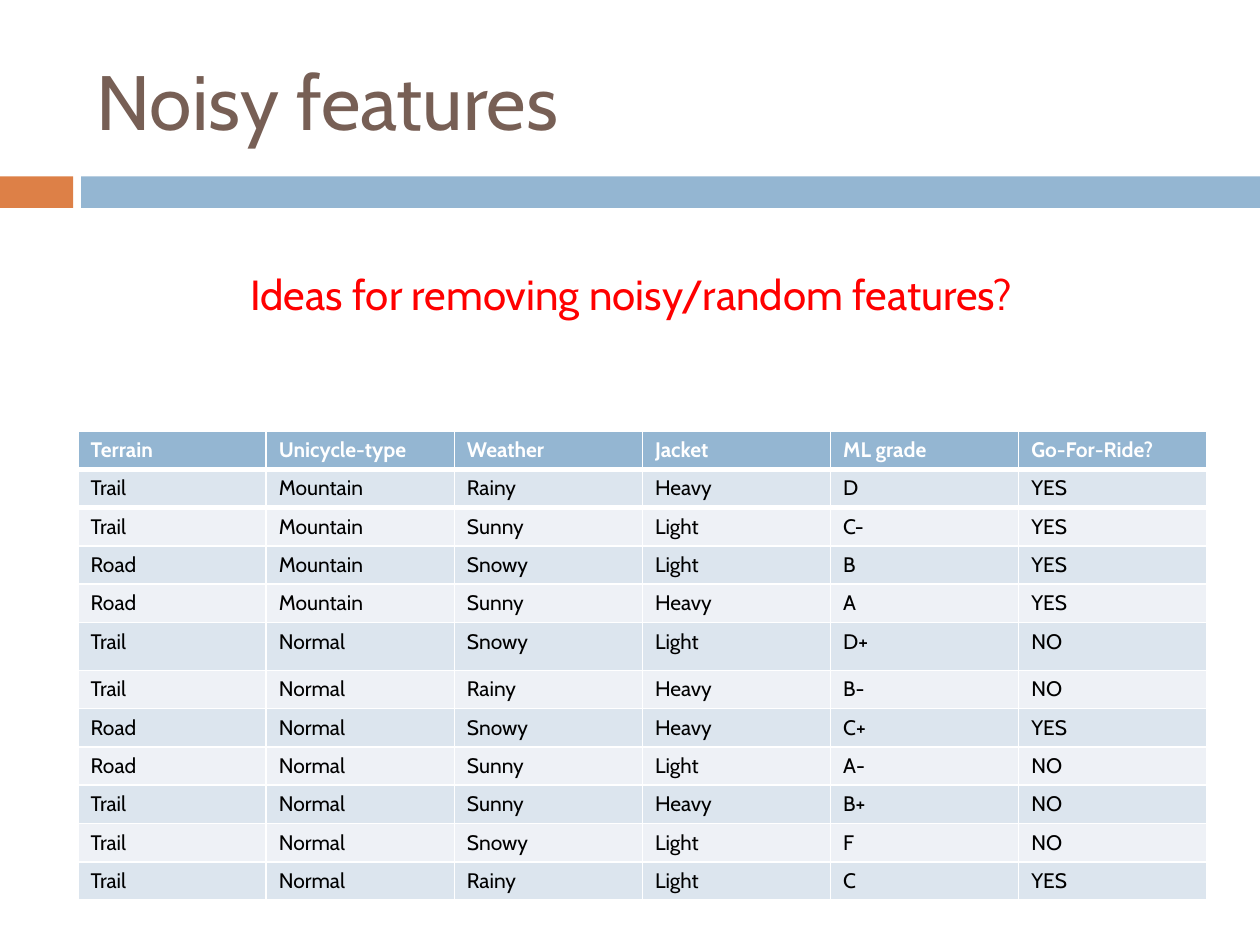
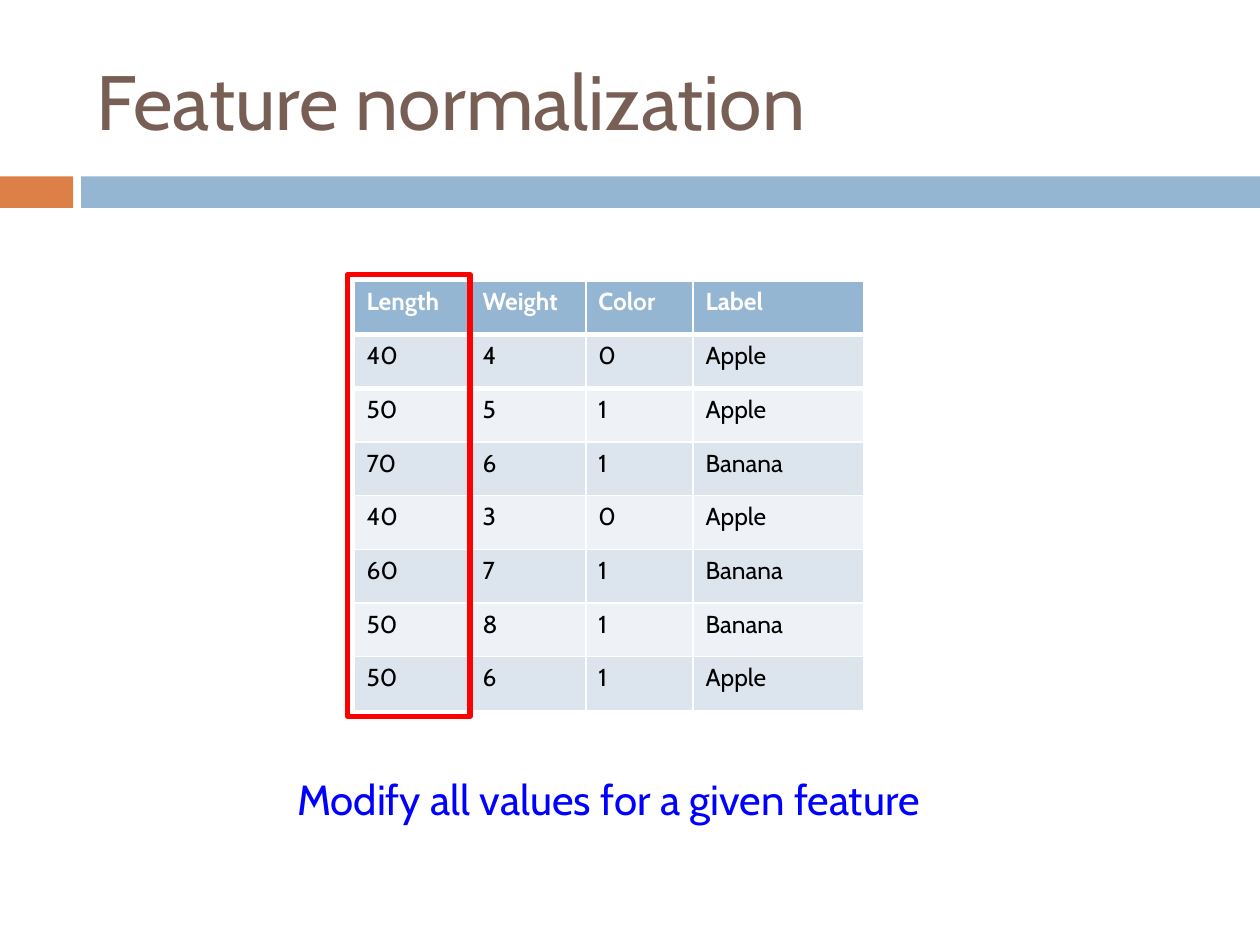
from lxml import etree
from pptx import Presentation
from pptx import util as u
from pptx.dml.color import RGBColor
from pptx.enum import shapes, text
from pptx.oxml import ns

FONT = "Cabin"
WHITE = RGBColor(0xFF, 0xFF, 0xFF)
BLACK = RGBColor(0x00, 0x00, 0x00)
BROWN = RGBColor(0x77, 0x5F, 0x55)
ORANGE = RGBColor(0xDD, 0x80, 0x47)
STEEL = RGBColor(0x94, 0xB6, 0xD2)
STRIPES = RGBColor(0xEE, 0xF1, 0xF6), RGBColor(0xDC, 0xE5, 0xEE)
RED = RGBColor(0xFF, 0x00, 0x00)
BLUE = RGBColor(0x00, 0x00, 0xFF)

COLUMNS, ROWS = 100, 75
TITLE_ONLY = 5

RIDES = """
Terrain Unicycle-type Weather Jacket ML_grade Go-For-Ride?
Trail Mountain Rainy Heavy D YES
Trail Mountain Sunny Light C- YES
Road Mountain Snowy Light B YES
Road Mountain Sunny Heavy A YES
Trail Normal Snowy Light D+ NO
Trail Normal Rainy Heavy B- NO
Road Normal Snowy Heavy C+ YES
Road Normal Sunny Light A- NO
Trail Normal Sunny Heavy B+ NO
Trail Normal Snowy Light F NO
Trail Normal Rainy Light C YES
"""

FRUIT = """
Length Weight Color Label
40 4 0 Apple
50 5 1 Apple
70 6 1 Banana
40 3 0 Apple
60 7 1 Banana
50 8 1 Banana
50 6 1 Apple
"""


def records(listing):
    """Split a listing into rows of words; an underscore joins two words."""
    return [[word.replace("_", " ") for word in line.split()]
            for line in listing.strip().splitlines()]


def rule_edge(cell, edge):
    """Draw a 3 pt white border on one edge (lnT or lnB) of a cell."""
    border = etree.Element(ns.qn(f"a:{edge}"), w=str(u.Pt(3)))
    fill = etree.SubElement(border, ns.qn("a:solidFill"))
    etree.SubElement(fill, ns.qn("a:srgbClr"), val=str(WHITE))
    cell._tc.get_or_add_tcPr().insert(0, border)


class Deck:
    """Holds the style and the current slide; lengths are grid columns and rows."""

    def __init__(self):
        self.show = Presentation()
        self.show.slide_width, self.show.slide_height = u.Inches(10), u.Inches(7.5)
        self.slide = None

    def across(self, columns):
        return round(self.show.slide_width * columns / COLUMNS)

    def down(self, rows):
        return round(self.show.slide_height * rows / ROWS)

    def place(self, left, top, width, height):
        return self.across(left), self.down(top), self.across(width), self.down(height)

    def style(self, paragraph, size, colour, bold=False):
        font = paragraph.font
        font.name, font.size, font.bold = FONT, u.Pt(size), bold
        font.color.rgb = colour

    def new_slide(self, heading):
        self.slide = self.show.slides.add_slide(self.show.slide_layouts[TITLE_ONLY])
        self.rectangle(0, 14, 5.8, 2.5, fill=ORANGE)
        self.rectangle(6.45, 14, 93.55, 2.5, fill=STEEL)
        title = self.slide.shapes.title
        title.left, title.top, title.width, title.height = self.place(6.67, 2.5, 89.2, 10.8)
        frame = title.text_frame
        frame.text = heading
        frame.auto_size = text.MSO_AUTO_SIZE.NONE
        frame.vertical_anchor = text.MSO_ANCHOR.MIDDLE
        frame.paragraphs[0].alignment = text.PP_ALIGN.LEFT
        self.style(frame.paragraphs[0], 44, BROWN)

    def rectangle(self, *place, fill=None, outline=None):
        box = self.slide.shapes.add_shape(shapes.MSO_SHAPE.RECTANGLE, *self.place(*place))
        box.shadow.inherit = False
        if fill:
            box.fill.solid()
            box.fill.fore_color.rgb = fill
        else:
            box.fill.background()
        if outline:
            box.line.color.rgb = outline
            box.line.width = u.Pt(3)
        else:
            box.line.fill.background()

    def message(self, words, colour, *place, space_before=0):
        frame = self.slide.shapes.add_textbox(*self.place(*place)).text_frame
        frame.word_wrap = True
        frame.text = words
        paragraph = frame.paragraphs[0]
        paragraph.space_before = u.Pt(space_before)
        self.style(paragraph, 24, colour)

    def table(self, entries, left, top, widths, heights, size):
        place = self.place(left, top, sum(widths), sum(heights))
        grid = self.slide.shapes.add_table(len(entries), len(widths), *place).table
        for column, width in zip(grid.columns, widths):
            column.width = self.across(width)
        for index, (row, height, words) in enumerate(zip(grid.rows, heights, entries)):
            row.height = self.down(height)
            header = index == 0
            for cell, word in zip(row.cells, words):
                cell.text = word
                cell.fill.solid()
                cell.fill.fore_color.rgb = STEEL if header else STRIPES[index % 2]
                self.style(cell.text_frame.paragraphs[0], size,
                           WHITE if header else BLACK, header)
                if index < 2:
                    rule_edge(cell, "lnB" if header else "lnT")


def noisy_features(deck):
    deck.new_slide("Noisy features")
    deck.message("Ideas for removing noisy/random features?", RED,
                 18.9, 20.8, 63.9, 10.1, space_before=7)
    rides = records(RIDES)
    heights = [3.04] * len(rides)
    heights[5] = 3.8
    deck.table(rides, 6.2, 34.2, [14.93] * 6, heights, 12)


def feature_normalization(deck):
    deck.new_slide("Feature normalization")
    fruit = records(FRUIT)
    left, top, height = 28.1, 22.3, 4.26
    widths = [9.2, 9.2, 8.5, 13.6]
    deck.table(fruit, left, top, widths, [height] * len(fruit), 14)
    margin = 0.5
    deck.rectangle(left - margin, top - margin, widths[0] + margin,
                   height * len(fruit) + 2 * margin, outline=RED)
    deck.message("Modify all values for a given feature", BLUE, 22.6, 60.9, 51.7, 5)


def main():
    deck = Deck()
    noisy_features(deck)
    feature_normalization(deck)
    deck.show.save("out.pptx")


if __name__ == "__main__":
    main()
